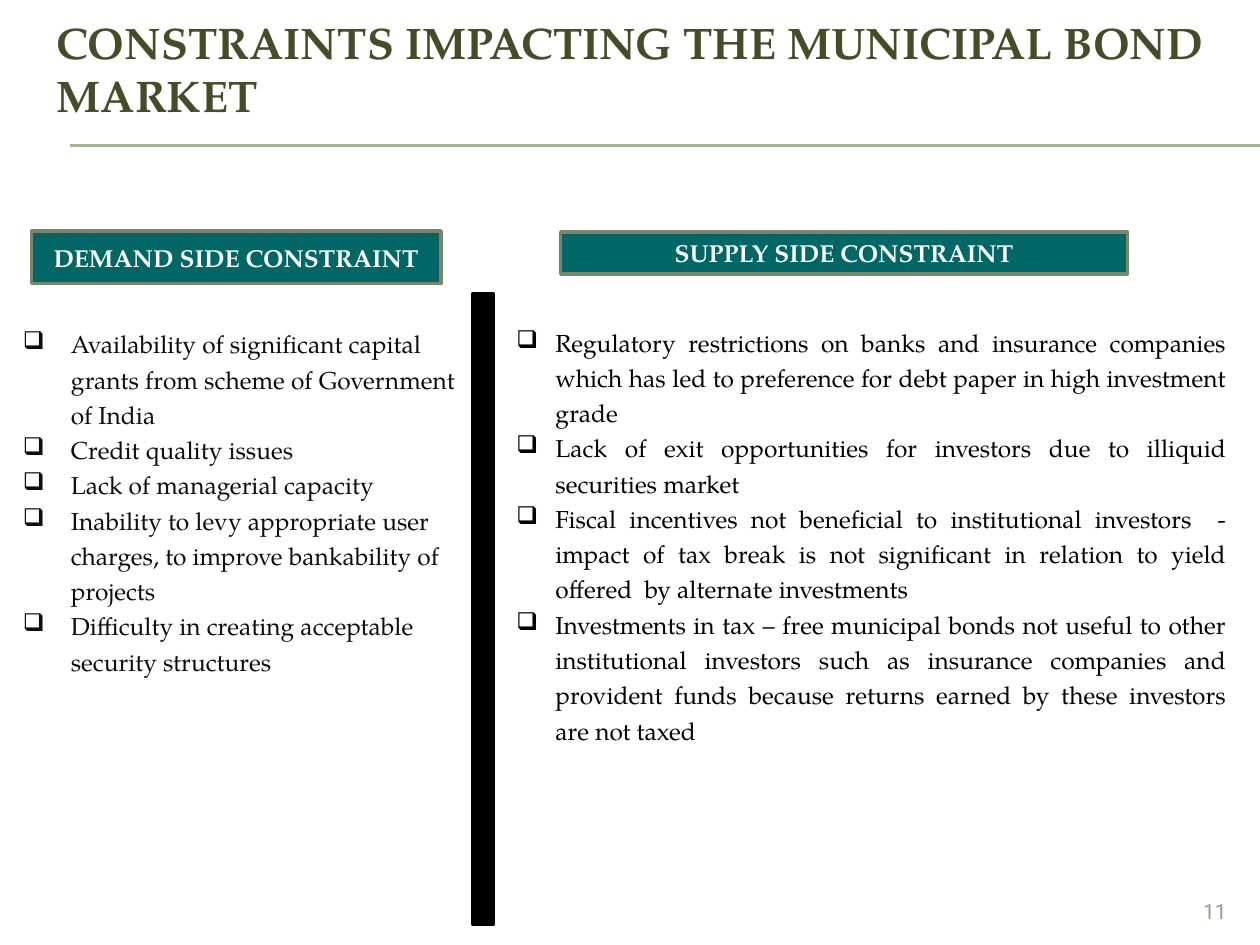
from lxml.etree import SubElement
from pptx import Presentation
from pptx.dml.color import RGBColor
from pptx.enum.shapes import MSO_CONNECTOR, MSO_SHAPE
from pptx.enum.text import MSO_ANCHOR as Anchor, MSO_AUTO_SIZE, PP_ALIGN as Align
from pptx.oxml.ns import qn
from pptx.util import Inches, Pt

OLIVE = RGBColor(0x44, 0x4D, 0x26)
SAGE = RGBColor(0xA5, 0xB5, 0x92)
MOSS = RGBColor(0x7A, 0x86, 0x6C)
GREY_GREEN = RGBColor(0x92, 0xA0, 0x81)
TEAL = RGBColor(0x00, 0x66, 0x66)
WHITE = RGBColor(0xFF, 0xFF, 0xFF)
NEAR_BLACK = RGBColor(0x0D, 0x0D, 0x0D)
BLACK = RGBColor(0x00, 0x00, 0x00)

DEMAND = [
    "Availability of significant capital grants from scheme of Government of India",
    "Credit quality issues",
    "Lack of managerial capacity",
    "Inability to levy appropriate user charges, to improve bankability of projects",
    "Difficulty in creating acceptable security structures",
]
SUPPLY = [
    "Regulatory restrictions on banks and insurance companies which has led to "
    "preference for debt paper in high investment grade",
    "Lack of exit opportunities for investors due to illiquid securities market",
    "Fiscal incentives not beneficial to institutional investors  - impact of tax break "
    "is not significant in relation to yield offered  by alternate investments",
    "Investments in tax – free municipal bonds not useful to other institutional "
    "investors such as insurance companies and provident funds because returns earned "
    "by these investors are not taxed",
]


class SlideBuilder:
    serif = "TeX Gyre Pagella"
    sans = "Roboto"
    body_size = 14
    columns, rows = 120, 90

    def __init__(self, deck):
        self.deck = deck
        self.slide = deck.slides.add_slide(deck.slide_layouts[5])

    def x(self, column):
        return round(self.deck.slide_width * column / self.columns)

    def y(self, row):
        return round(self.deck.slide_height * row / self.rows)

    def area(self, column, row, width, height):
        return self.x(column), self.y(row), self.x(width), self.y(height)

    def set_text(self, shape, lines, color, align, size=body_size, bold=False,
                 font=serif, anchor=Anchor.MIDDLE):
        frame = shape.text_frame
        frame.text = "\n".join(lines)
        frame.word_wrap = True
        frame.auto_size = MSO_AUTO_SIZE.NONE
        frame.vertical_anchor = anchor
        for para in frame.paragraphs:
            para.alignment = align
            for span in para.runs:
                span.font.name = font
                span.font.size = Pt(size)
                span.font.bold = bold
                span.font.color.rgb = color
        return frame.paragraphs

    def title(self, text, *area):
        title = self.slide.shapes.title
        title.left, title.top, title.width, title.height = self.area(*area)
        self.set_text(title, [text], OLIVE, Align.LEFT, size=25.2, bold=True)

    def rule(self, column, row):
        y = self.y(row)
        line = self.slide.shapes.add_connector(
            MSO_CONNECTOR.STRAIGHT, self.x(column), y, self.deck.slide_width, y)
        line.line.color.rgb = SAGE
        line.line.width = Pt(0.75)
        SubElement(line.element.spPr, qn("a:effectLst"))

    def bar(self, fill, outline, *area):
        bar = self.slide.shapes.add_shape(MSO_SHAPE.RECTANGLE, *self.area(*area))
        bar.shadow.inherit = False
        bar.fill.solid()
        bar.fill.fore_color.rgb = fill
        bar.line.color.rgb = outline
        bar.line.width = Pt(2)
        return bar

    def heading(self, text, *area):
        self.set_text(self.bar(TEAL, MOSS, *area), [text], WHITE, Align.CENTER, bold=True)

    def bullets(self, items, color, align, indent, *area):
        box = self.slide.shapes.add_textbox(*self.area(*area))
        for para in self.set_text(box, items, color, align):
            para.line_spacing = 1.2
            properties = para._p.get_or_add_pPr()
            properties.set("marL", str(Inches(indent)))
            properties.set("indent", str(-Inches(indent)))
            SubElement(properties, qn("a:buChar"), char="❑")

    def page_number(self, text, *area):
        box = self.slide.shapes.add_textbox(*self.area(*area))
        self.set_text(box, [text], GREY_GREEN, Align.RIGHT, size=12, font=self.sans,
                      anchor=Anchor.TOP)


def main():
    deck = Presentation()
    deck.slide_width, deck.slide_height = Inches(10), Inches(7.5)
    page = SlideBuilder(deck)
    page.title("CONSTRAINTS IMPACTING THE MUNICIPAL BOND MARKET", 4.2, 1, 111.7, 11)
    for row in (13.8, 13.9):
        page.rule(6.7, row)
    page.page_number("11", 108, 85, 10, 3.2)
    page.bullets(DEMAND, NEAR_BLACK, Align.LEFT, 0.38, 1, 20, 44, 55.2)
    page.bullets(SUPPLY, BLACK, Align.JUSTIFY, 0.31, 48, 24.4, 70, 52.8)
    page.bar(BLACK, BLACK, 45, 28, 2, 60)
    page.heading("DEMAND SIDE CONSTRAINT", 3, 22, 39, 5)
    page.heading("SUPPLY SIDE CONSTRAINT", 53.4, 22.1, 54, 4)
    deck.save("out.pptx")


if __name__ == "__main__":
    main()
